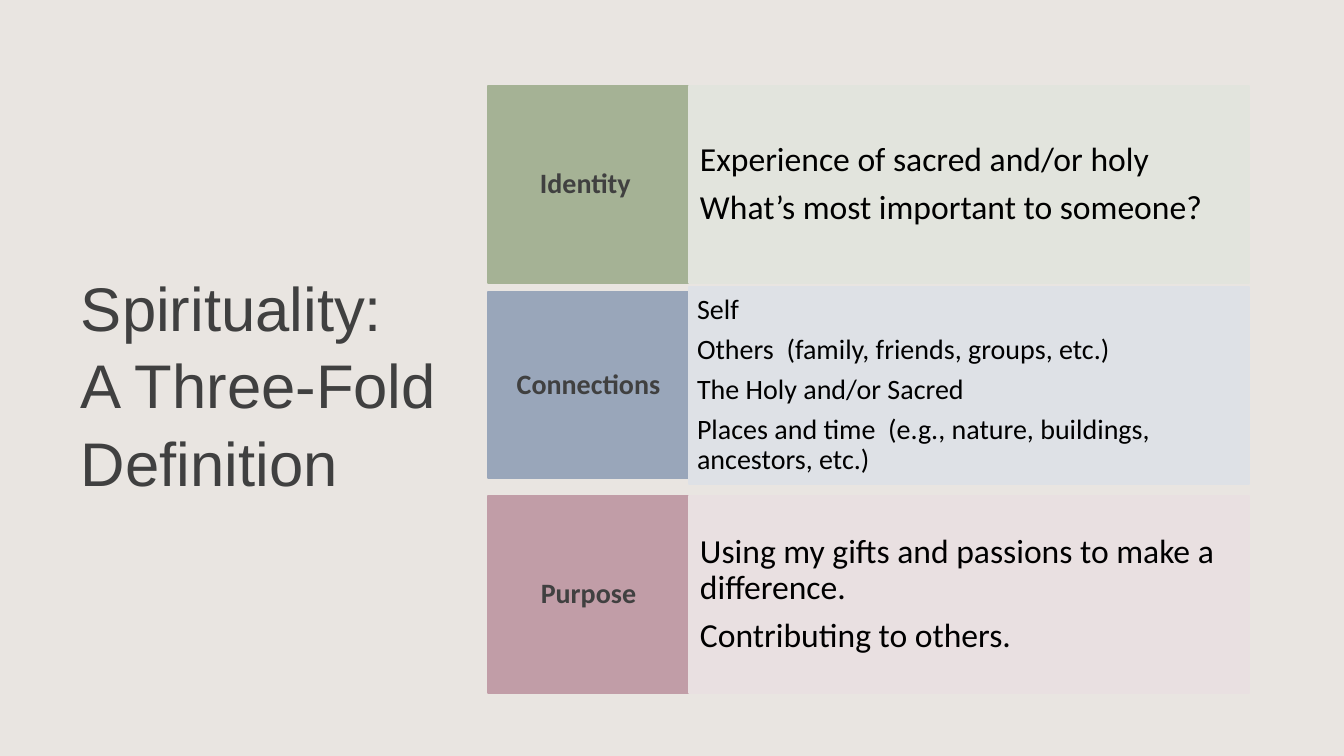
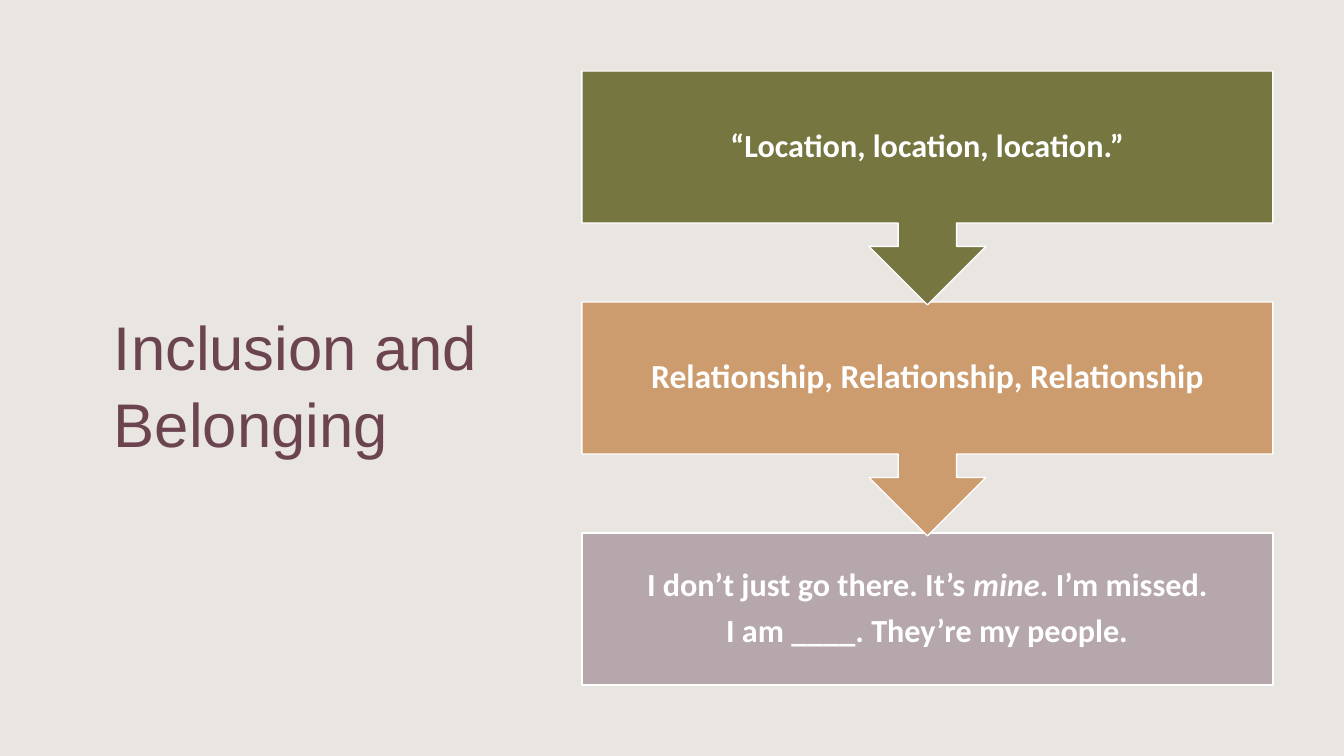
from pptx import Presentation
from pptx.dml.color import RGBColor
from pptx.enum.shapes import MSO_SHAPE
from pptx.enum.text import MSO_ANCHOR, PP_ALIGN
from pptx.util import Emu, Pt

RECTANGLE = MSO_SHAPE.RECTANGLE
CALLOUT = MSO_SHAPE.DOWN_ARROW_CALLOUT
MIDDLE = MSO_ANCHOR.MIDDLE
LEFT, CENTER = PP_ALIGN.LEFT, PP_ALIGN.CENTER

EMU_PER_PX = 914400 / 100.8
TITLE_FONT, BODY_FONT = "Arial", "Calibri"
COLORS = {
    "background": "E9E5E1",
    "dark": "404040",
    "plum": "6B444F",
    "black": "000000",
    "white": "FFFFFF",
    "sage": "A5B295",
    "sage_pale": "E2E4DD",
    "blue": "99A6BA",
    "blue_pale": "DEE1E6",
    "rose": "C19DA7",
    "rose_pale": "E9E0E1",
    "olive": "767640",
    "tan": "CC9C6F",
    "mauve": "B5A7AC",
}


def px(*lengths):
    return [Emu(round(length * EMU_PER_PX)) for length in lengths]


def add_panel(page, kind, frame, fill, line, lines, size, color, bold, align, inset):
    """Add a filled shape with text; words between asterisks become italic."""
    panel = page.shapes.add_shape(kind, *px(*frame))
    panel.shadow.inherit = False
    panel.fill.solid()
    panel.fill.fore_color.rgb = RGBColor.from_string(COLORS[fill])
    panel.line.color.rgb = RGBColor.from_string(COLORS[line])
    panel.line.width = Pt(1)
    text_frame = panel.text_frame
    text_frame.word_wrap = True
    text_frame.vertical_anchor = MIDDLE
    text_frame.margin_left, text_frame.margin_right = px(inset, inset)
    text_frame.margin_top = text_frame.margin_bottom = 0
    text_frame.text = "\n".join(lines)
    for para, line_text in zip(text_frame.paragraphs, lines):
        para.alignment = align
        para.line_spacing = 0.9
        para.space_after = Pt(round(size * 0.35))
        para.text = ""
        for index, part in enumerate(line_text.split("*")):
            span = para.add_run()
            span.text = part
            span.font.name = BODY_FONT
            span.font.size = Pt(size)
            span.font.bold = bold
            span.font.italic = index % 2 == 1
            span.font.color.rgb = RGBColor.from_string(COLORS[color])


deck = Presentation()
deck.slide_width, deck.slide_height = px(1344, 756)

# Background and title of every slide: text, colour, left, width
titles = [
    ("Spirituality:\vA Three-Fold Definition", "dark", 71, 405),
    ("Inclusion and Belonging", "plum", 104, 402),
]
pages = []
for title, color, left, width in titles:
    page = deck.slides.add_slide(deck.slide_layouts[6])
    page.background.fill.solid()
    page.background.fill.fore_color.rgb = RGBColor.from_string(COLORS["background"])
    box = page.shapes.add_textbox(*px(left, 79, width, 607))
    box.text_frame.word_wrap = True
    box.text_frame.vertical_anchor = MIDDLE
    box.text_frame.margin_left, box.text_frame.margin_right = px(10, 10)
    box.text_frame.text = title
    para = box.text_frame.paragraphs[0]
    para.line_spacing = 1.05
    for span in para.runs:
        span.font.name = TITLE_FONT
        span.font.size = Pt(44)
        span.font.color.rgb = RGBColor.from_string(COLORS[color])
    pages.append(page)
definition_page, belonging_page = pages

# Three-fold definition: a label and its description in each row
LABEL_LEFT, LABEL_WIDTH = 488, 201
DESCRIPTION_WIDTH, ROW_HEIGHT = 560, 197
# label, colour, top, label height, text size, inset, description
rows = [
    ("Identity ", "sage", 86, 197, 24, 11,
     ["Experience of sacred and/or holy", "What’s most important to someone?"]),
    ("Connections", "blue", 287, 186, 20, 8,
     ["Self", "Others  (family, friends, groups, etc.)", "The Holy and/or Sacred",
      "Places and time  (e.g., nature, buildings, ancestors, etc.)"]),
    ("Purpose", "rose", 496, 197, 24, 11,
     ["Using my gifts and passions to make a difference.", "Contributing to others."]),
]
for label, color, top, label_height, size, inset, description in rows:
    label_top = top + (ROW_HEIGHT - label_height) // 2
    label_frame = (LABEL_LEFT, label_top, LABEL_WIDTH, label_height)
    add_panel(definition_page, RECTANGLE, label_frame, color, color,
              [label], 20, "dark", True, CENTER, 6)
    description_frame = (LABEL_LEFT + LABEL_WIDTH, top, DESCRIPTION_WIDTH, ROW_HEIGHT)
    pale = color + "_pale"
    add_panel(definition_page, RECTANGLE, description_frame, pale, pale,
              description, size, "black", False, LEFT, inset)

# Steps towards belonging, drawn upwards so each arrow tip overlaps the next step
STEP_TOP, STEP_PITCH = 71, 231
steps = [
    (CALLOUT, 234, "olive", 23, ["“Location, location, location.”"]),
    (CALLOUT, 234, "tan", 24, ["Relationship, Relationship, Relationship"]),
    (RECTANGLE, 152, "mauve", 23,
     ["I don’t just go there. It’s *mine*. I’m missed.", "I am ____. They’re my people."]),
]
for index, (kind, height, color, size, lines) in reversed(list(enumerate(steps))):
    step_frame = (582, STEP_TOP + index * STEP_PITCH, 691, height)
    add_panel(belonging_page, kind, step_frame, color, "white",
              lines, size, "white", True, CENTER, 18)

deck.save("out.pptx")
